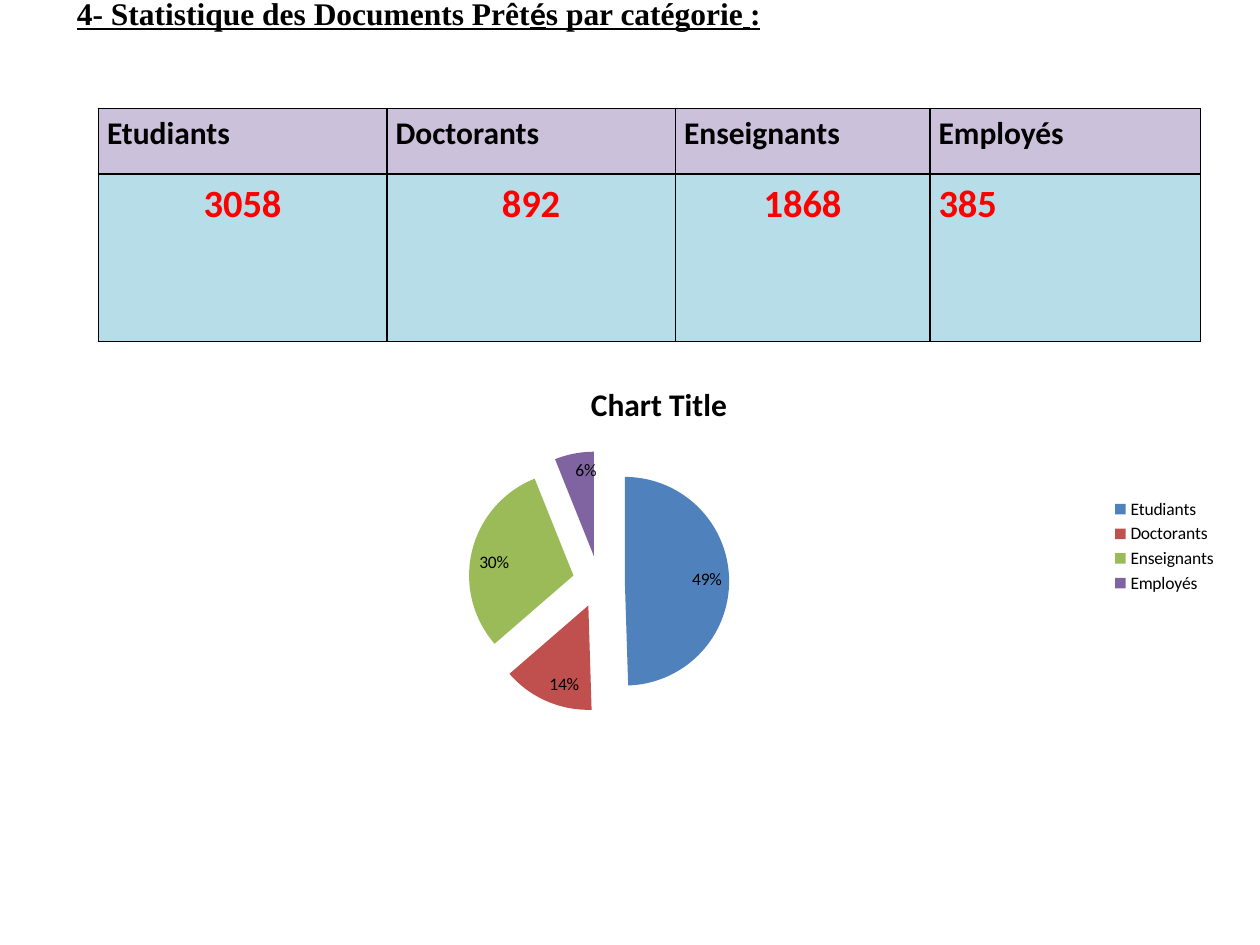
from lxml.etree import SubElement
from pptx import Presentation
from pptx.chart.data import CategoryChartData
from pptx.dml.color import RGBColor
from pptx.enum.chart import XL_CHART_TYPE as ChartType
from pptx.enum.chart import XL_LABEL_POSITION as LabelPosition
from pptx.enum.chart import XL_LEGEND_POSITION as LegendPosition
from pptx.enum.text import MSO_ANCHOR as Anchor
from pptx.enum.text import MSO_AUTO_SIZE as AutoSize
from pptx.enum.text import PP_ALIGN as Align
from pptx.oxml import parse_xml
from pptx.oxml.ns import nsdecls, qn
from pptx.util import Inches, Pt

BLACK = RGBColor(0x00, 0x00, 0x00)
RED = RGBColor(0xFF, 0x00, 0x00)
LILAC = RGBColor(0xCC, 0xC1, 0xDA)
PALE_BLUE = RGBColor(0xB7, 0xDE, 0xE8)
SLICE_COLORS = [
    RGBColor(0x4F, 0x81, 0xBD),
    RGBColor(0xC0, 0x50, 0x4D),
    RGBColor(0x9B, 0xBB, 0x59),
    RGBColor(0x80, 0x64, 0xA2),
]

SANS = "Calibri"
SERIF = "Times New Roman"
CATEGORIES = ["Etudiants", "Doctorants", "Enseignants", "Employés"]
LOANS = ["3058", "892", "1868", "385"]
SHARES = [49, 14, 30, 6]
COLUMN_WIDTHS = [2.29, 2.29, 2.02, 2.15]
ROW_HEIGHTS = [0.52, 1.33]
HEADING_RUNS = [
    ("4- Statistique des Documents Prêt", SERIF),
    ("é", SANS),
    ("s par catégorie", SERIF),
    (" ", SANS),
    (":", SERIF),
]


def style_font(font, name, size, color, bold=True):
    font.name = name
    font.size = Pt(size)
    font.bold = bold
    font.color.rgb = color


def add_run(paragraph, text, name, size, color):
    run = paragraph.add_run()
    run.text = text
    style_font(run.font, name, size, color)
    return run


def fill_heading(title):
    title.left, title.top = Inches(0.51), Inches(-0.1)
    title.width, title.height = Inches(5.68), Inches(0.71)
    frame = title.text_frame
    frame.word_wrap = False
    frame.auto_size = AutoSize.NONE
    frame.vertical_anchor = Anchor.TOP
    paragraph = frame.paragraphs[0]
    paragraph.alignment = Align.LEFT
    for text, name in HEADING_RUNS:
        add_run(paragraph, text, name, 18, BLACK).font.underline = True


def add_borders(cell):
    properties = cell._tc.get_or_add_tcPr()
    for position, side in enumerate(("lnL", "lnR", "lnT", "lnB")):
        line = parse_xml(
            f'<a:{side} {nsdecls("a")} w="{Pt(1)}"><a:solidFill>'
            f'<a:srgbClr val="{BLACK}"/></a:solidFill></a:{side}>'
        )
        properties.insert(position, line)


def fill_cell(cell, text, size, color, background, alignment):
    cell.margin_left = cell.margin_right = Inches(0.07)
    cell.margin_top = cell.margin_bottom = 0
    cell.fill.solid()
    cell.fill.fore_color.rgb = background
    paragraph = cell.text_frame.paragraphs[0]
    paragraph.line_spacing = 1.15
    paragraph.alignment = alignment
    add_run(paragraph, text, SANS, size, color)
    add_borders(cell)


def add_loans_table(slide):
    frame = slide.shapes.add_table(
        len(ROW_HEIGHTS), len(COLUMN_WIDTHS), Inches(0.78), Inches(0.86),
        Inches(sum(COLUMN_WIDTHS)), Inches(sum(ROW_HEIGHTS)),
    )
    table = frame.table
    for row, height in zip(table.rows, ROW_HEIGHTS):
        row.height = Inches(height)
    for column, width in zip(table.columns, COLUMN_WIDTHS):
        column.width = Inches(width)
    last = len(CATEGORIES) - 1
    for index, (category, loans) in enumerate(zip(CATEGORIES, LOANS)):
        alignment = Align.LEFT if index == last else Align.CENTER
        fill_cell(table.cell(0, index), category, 18, BLACK, LILAC, Align.LEFT)
        fill_cell(table.cell(1, index), loans, 22, RED, PALE_BLUE, alignment)


def explode_slices(series, percent):
    explosion = SubElement(series._element, qn("c:explosion"))
    explosion.set("val", str(percent))
    series._element.find(qn("c:dPt")).addprevious(explosion)


def add_shares_chart(slide):
    data = CategoryChartData()
    data.categories = CATEGORIES
    data.add_series("Series 1", SHARES)
    chart = slide.shapes.add_chart(
        ChartType.PIE, Inches(0.7), Inches(2.88), Inches(9.06), Inches(2.91), data
    ).chart
    style_font(chart.font, SANS, 10, BLACK, bold=False)
    chart.has_title = True
    add_run(chart.chart_title.text_frame.paragraphs[0], "Chart Title", SANS, 18, BLACK)
    chart.chart_title.include_in_layout = False
    chart.has_legend = True
    chart.legend.position = LegendPosition.RIGHT
    chart.legend.include_in_layout = False

    plot = chart.plots[0]
    plot.vary_by_categories = True
    series = plot.series[0]
    for index, color in enumerate(SLICE_COLORS):
        fill = series.points[index].format.fill
        fill.solid()
        fill.fore_color.rgb = color
    explode_slices(series, 25)
    labels = series.data_labels
    labels.show_percentage = True
    labels.show_value = False
    labels.number_format = "0%"
    labels.number_format_is_linked = False
    labels.position = LabelPosition.INSIDE_END


def main():
    presentation = Presentation()
    presentation.slide_width = Inches(10)
    presentation.slide_height = Inches(7.5)
    slide = presentation.slides.add_slide(presentation.slide_layouts[5])
    add_loans_table(slide)
    fill_heading(slide.shapes.title)
    add_shares_chart(slide)
    presentation.save("out.pptx")


if __name__ == "__main__":
    main()
